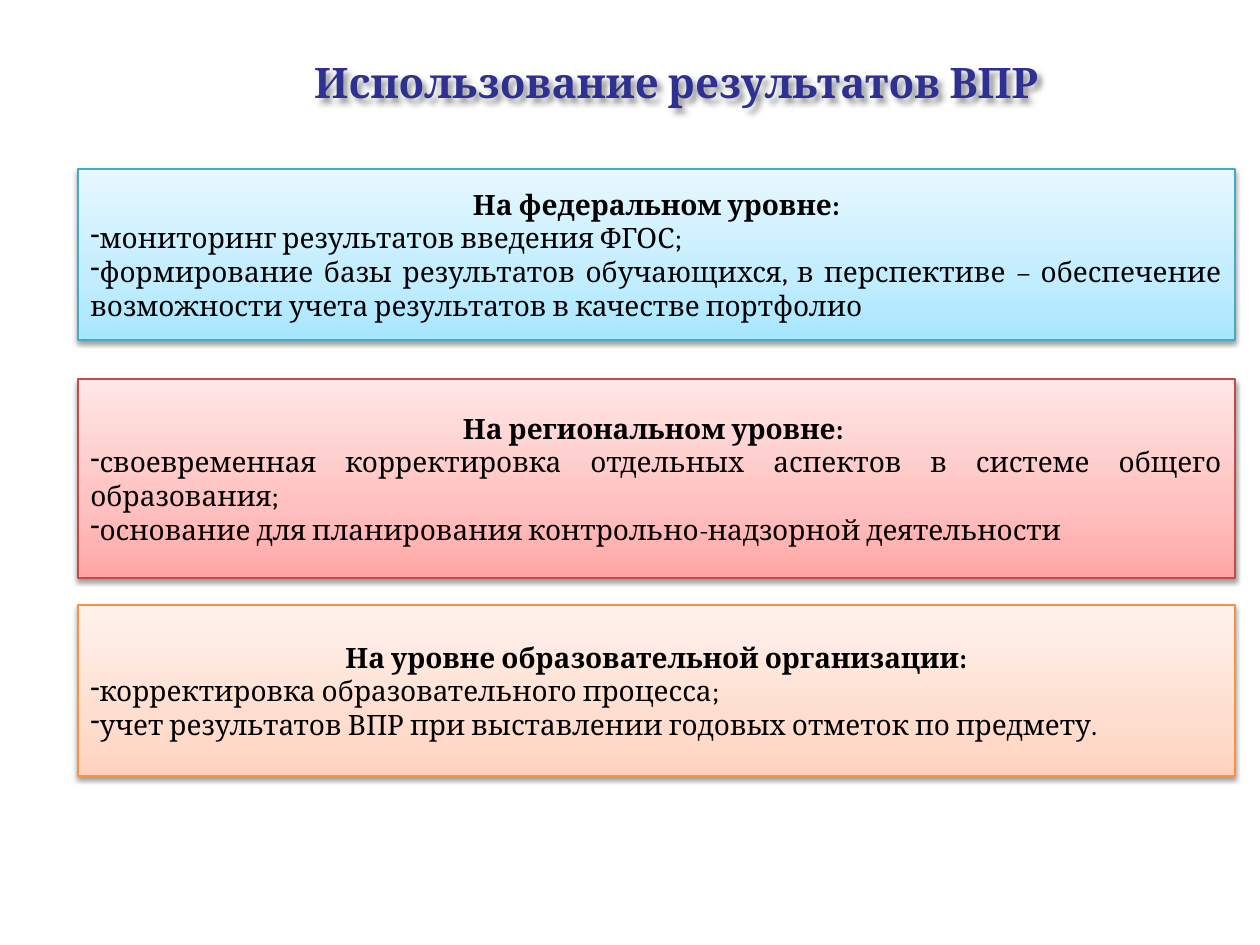
from copy import deepcopy

from lxml.etree import SubElement
from pptx import Presentation
from pptx.dml.color import RGBColor
from pptx.enum.shapes import MSO_SHAPE
from pptx.enum.text import MSO_ANCHOR, MSO_AUTO_SIZE, PP_ALIGN
from pptx.oxml.ns import qn
from pptx.util import Pt

PX = 914400 // 126
SLIDE_WIDTH, SLIDE_HEIGHT = 9144000, 6858000
FONT = "Cambria"
BLACK = RGBColor(0x00, 0x00, 0x00)
INDIGO = RGBColor(0x2E, 0x31, 0x92)

TITLE = "Использование результатов ВПР"
TITLE_AT = (192, 50, 969, 63)
LEVEL_LEFT, LEVEL_WIDTH = 78, 1157
STOP_POSITIONS = (0, 0.35, 1)
LEVELS = [
    {
        "heading": "На федеральном уровне:",
        "uses": [
            "мониторинг результатов введения ФГОС;",
            "формирование базы результатов обучающихся, в перспективе – "
            "обеспечение возможности учета результатов в качестве портфолио",
        ],
        "top": 169, "height": 171,
        "border": RGBColor(0x46, 0xAA, 0xC5),
        "gradient": (RGBColor(0xA7, 0xE6, 0xFF), RGBColor(0xC1, 0xED, 0xFF),
                     RGBColor(0xE7, 0xF8, 0xFF)),
    },
    {
        "heading": "На региональном уровне: ",
        "uses": [
            "своевременная корректировка отдельных аспектов в системе "
            "общего образования;",
            "основание для планирования контрольно-надзорной деятельности",
        ],
        "top": 379, "height": 199,
        "border": RGBColor(0xBF, 0x4C, 0x48),
        "gradient": (RGBColor(0xFF, 0xA6, 0xA5), RGBColor(0xFF, 0xC0, 0xBF),
                     RGBColor(0xFF, 0xE7, 0xE7)),
    },
    {
        "heading": "На уровне образовательной организации:",
        "uses": [
            "корректировка образовательного процесса;",
            "учет результатов ВПР при выставлении годовых отметок по предмету.",
        ],
        "top": 605, "height": 171,
        "border": RGBColor(0xF6, 0x92, 0x40),
        "gradient": (RGBColor(0xFF, 0xD2, 0xBD), RGBColor(0xFF, 0xDE, 0xD0),
                     RGBColor(0xFF, 0xF2, 0xED)),
    },
]


def add_shadow(shape, blur, distance, angle, opacity):
    """Give the shape a soft black shadow; lengths in points, opacity in percent."""
    shape.shadow.inherit = False
    effects = shape._element.spPr.find(qn("a:effectLst"))
    shadow = SubElement(effects, qn("a:outerShdw"), {
        "blurRad": str(Pt(blur)), "dist": str(Pt(distance)),
        "dir": str(angle * 60000), "rotWithShape": "0"})
    color = SubElement(shadow, qn("a:srgbClr"), val="000000")
    SubElement(color, qn("a:alpha"), val=str(opacity * 1000))


def fill_upwards(shape, colors):
    shape.fill.gradient()
    shape.fill.gradient_angle = 90
    stop_list = shape._element.spPr.find(".//" + qn("a:gsLst"))
    stop_list.append(deepcopy(stop_list[0]))
    for stop, position, color in zip(shape.fill.gradient_stops, STOP_POSITIONS, colors):
        stop.position = position
        stop.color.rgb = color


def write(paragraph, text, size, color, bold, alignment):
    paragraph.alignment = alignment
    run = paragraph.add_run()
    run.text = text
    run.font.color.rgb = color
    for name, value in {"name": FONT, "size": Pt(size), "bold": bold}.items():
        setattr(run.font, name, value)


def add_title(slide):
    title = slide.shapes.add_textbox(*(length * PX for length in TITLE_AT))
    title.text_frame.word_wrap = True
    title.text_frame.auto_size = MSO_AUTO_SIZE.SHAPE_TO_FIT_TEXT
    write(title.text_frame.paragraphs[0], TITLE, 24, INDIGO, True, PP_ALIGN.CENTER)
    add_shadow(title, 3, 3, 50, 40)


def add_level(slide, level):
    box = slide.shapes.add_shape(
        MSO_SHAPE.RECTANGLE, LEVEL_LEFT * PX, level["top"] * PX,
        LEVEL_WIDTH * PX, level["height"] * PX)
    fill_upwards(box, level["gradient"])
    box.line.color.rgb = level["border"]
    box.line.width = Pt(0.75)
    add_shadow(box, 3.1, 1.6, 90, 38)

    frame = box.text_frame
    frame.word_wrap = True
    frame.vertical_anchor = MSO_ANCHOR.MIDDLE
    write(frame.paragraphs[0], level["heading"], 16, BLACK, True, PP_ALIGN.CENTER)
    for use in level["uses"]:
        paragraph = frame.add_paragraph()
        write(paragraph, use, 16, BLACK, False, PP_ALIGN.JUSTIFY)
        SubElement(paragraph._p.get_or_add_pPr(), qn("a:buChar"), char="-")


def main():
    presentation = Presentation()
    presentation.slide_width = SLIDE_WIDTH
    presentation.slide_height = SLIDE_HEIGHT
    slide = presentation.slides.add_slide(presentation.slide_layouts[6])
    add_title(slide)
    for level in LEVELS:
        add_level(slide, level)
    presentation.save("out.pptx")


if __name__ == "__main__":
    main()
